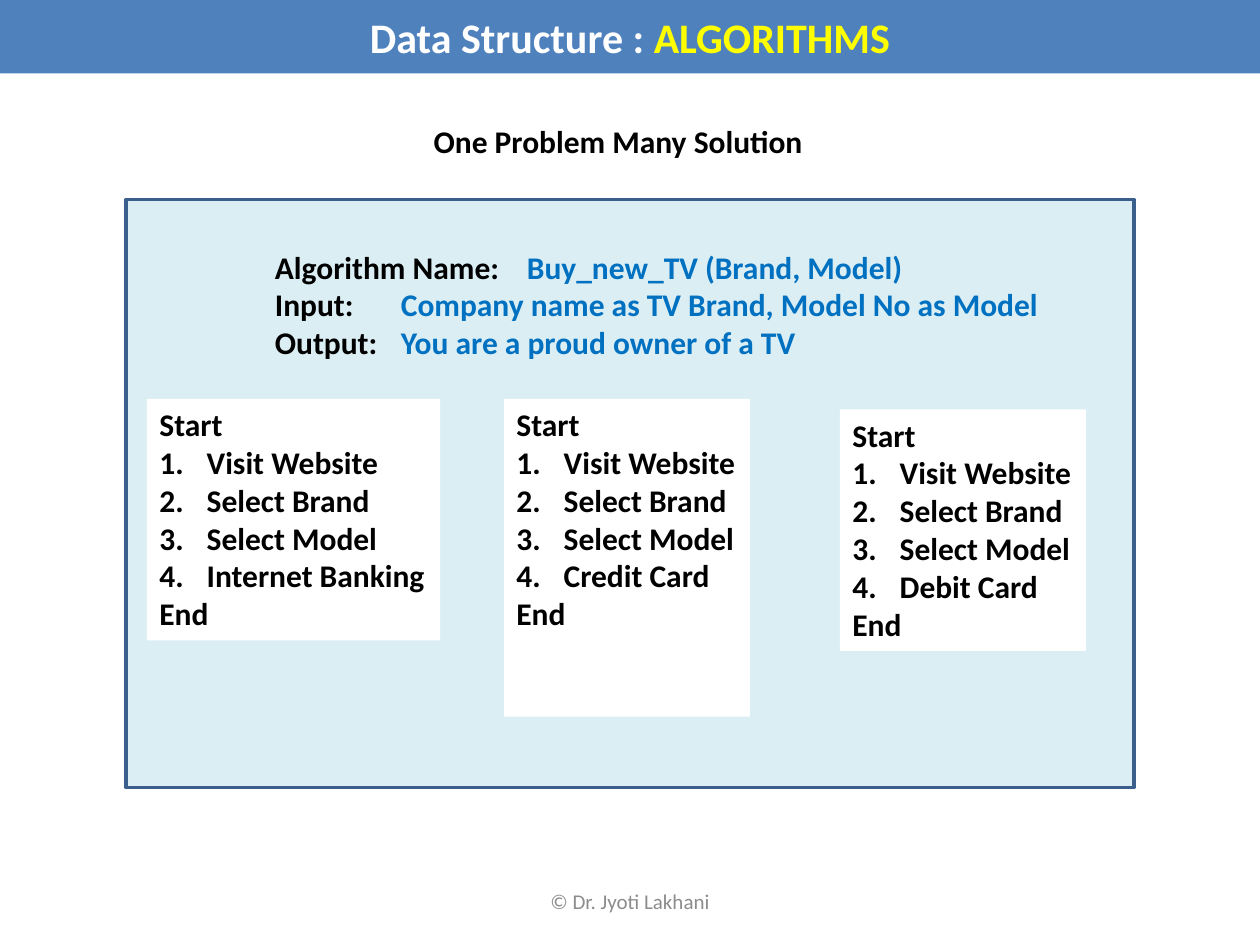
from pptx import Presentation
from pptx.dml.color import RGBColor
from pptx.enum.shapes import MSO_SHAPE as Preset
from pptx.enum.text import MSO_ANCHOR as Anchor, PP_ALIGN as Align
from pptx.oxml.ns import qn
from pptx.util import Pt
from lxml.etree import SubElement

COLORS = {
    "banner": "4F81BD", "panel": "DBEEF4", "border": "3A5F8C",
    "white": "FFFFFF", "black": "000000", "yellow": "FFFF00",
    "blue": "0070C0", "gray": "8C8C8C",
}
SHARED_STEPS = ["Visit Website", "Select Brand", "Select Model"]
SOLUTIONS = [
    ("Internet Banking", (84, 228, 167.5, 138)),
    ("Credit Card", (288, 228, 140.5, 181.5)),
    ("Debit Card", (480, 234, 140.5, 138)),
]
SIGNATURE = [
    ("Algorithm Name: \t", "Buy_new_TV (Brand, Model)"),
    ("Input:\t", "Company name as TV Brand, Model No as Model"),
    ("Output:\t", "You are a proud owner of a TV"),
]


def rgb(name):
    return RGBColor.from_string(COLORS[name])


def add_rectangle(page, box, fill, border=None):
    shape = page.shapes.add_shape(Preset.RECTANGLE, *map(Pt, box))
    shape.shadow.inherit = False
    shape.fill.solid()
    shape.fill.fore_color.rgb = rgb(fill)
    if border:
        shape.line.color.rgb = rgb(border)
        shape.line.width = Pt(2)
    else:
        shape.line.fill.background()
    return shape


def add_text_box(page, box, wrap=False, anchor=Anchor.TOP):
    frame = page.shapes.add_textbox(*map(Pt, box)).text_frame
    frame.word_wrap = wrap
    frame.vertical_anchor = anchor
    return frame


def write(para, parts, size=18, bold=True, align=Align.LEFT):
    para.alignment = align
    for text, color in parts:
        span = para.add_run()
        span.text = text
        span.font.name = "Calibri"
        span.font.size = Pt(size)
        span.font.bold = bold
        span.font.color.rgb = rgb(color)


def paragraphs(frame, count):
    for _ in range(count - 1):
        frame.add_paragraph()
    return frame.paragraphs


def set_hanging(para, numbered):
    properties = para._p.get_or_add_pPr()
    properties.set("marL", str(Pt(27)))
    properties.set("indent", str(-Pt(27)))
    if numbered:
        SubElement(properties, qn("a:buFont"), typeface="+mj-lt")
        SubElement(properties, qn("a:buAutoNum"), type="arabicPeriod")


def add_banner(page, box):
    frame = add_rectangle(page, box, "banner").text_frame
    frame.vertical_anchor = Anchor.MIDDLE
    write(frame.paragraphs[0],
          [("Data Structure : ", "white"), ("ALGORITHMS", "yellow")],
          size=24, align=Align.CENTER)


def add_heading(page, box):
    frame = add_text_box(page, box)
    write(frame.paragraphs[0], [("One Problem Many Solution", "black")],
          align=Align.CENTER)


def add_signature(page, box):
    frame = add_text_box(page, box)
    for para, (label, value) in zip(paragraphs(frame, len(SIGNATURE)), SIGNATURE):
        write(para, [(label, "black"), (value, "blue")])


def add_solution(page, box, payment):
    frame = add_rectangle(page, box, "white").text_frame
    frame.word_wrap = False
    frame.vertical_anchor = Anchor.TOP
    lines = ["Start", *SHARED_STEPS, payment, "End"]
    for para, line in zip(paragraphs(frame, len(lines)), lines):
        write(para, [(line, "black")])
        set_hanging(para, line not in ("Start", "End"))


def add_footer(page, box):
    frame = add_text_box(page, box, wrap=True, anchor=Anchor.MIDDLE)
    write(frame.paragraphs[0], [("© Dr. Jyoti Lakhani", "gray")],
          size=12, bold=False, align=Align.CENTER)


def main():
    deck = Presentation()
    deck.slide_width, deck.slide_height = Pt(720), Pt(540)
    page = deck.slides.add_slide(deck.slide_layouts[6])
    add_banner(page, (0, 0, 720, 42))
    add_heading(page, (239.5, 66, 227.5, 29))
    add_rectangle(page, (72, 114, 576, 336), "panel", "border")
    add_signature(page, (150, 138, 458.5, 72.7))
    for payment, box in SOLUTIONS:
        add_solution(page, box, payment)
    add_footer(page, (246, 500.5, 228, 28.75))
    deck.save("out.pptx")


if __name__ == "__main__":
    main()
